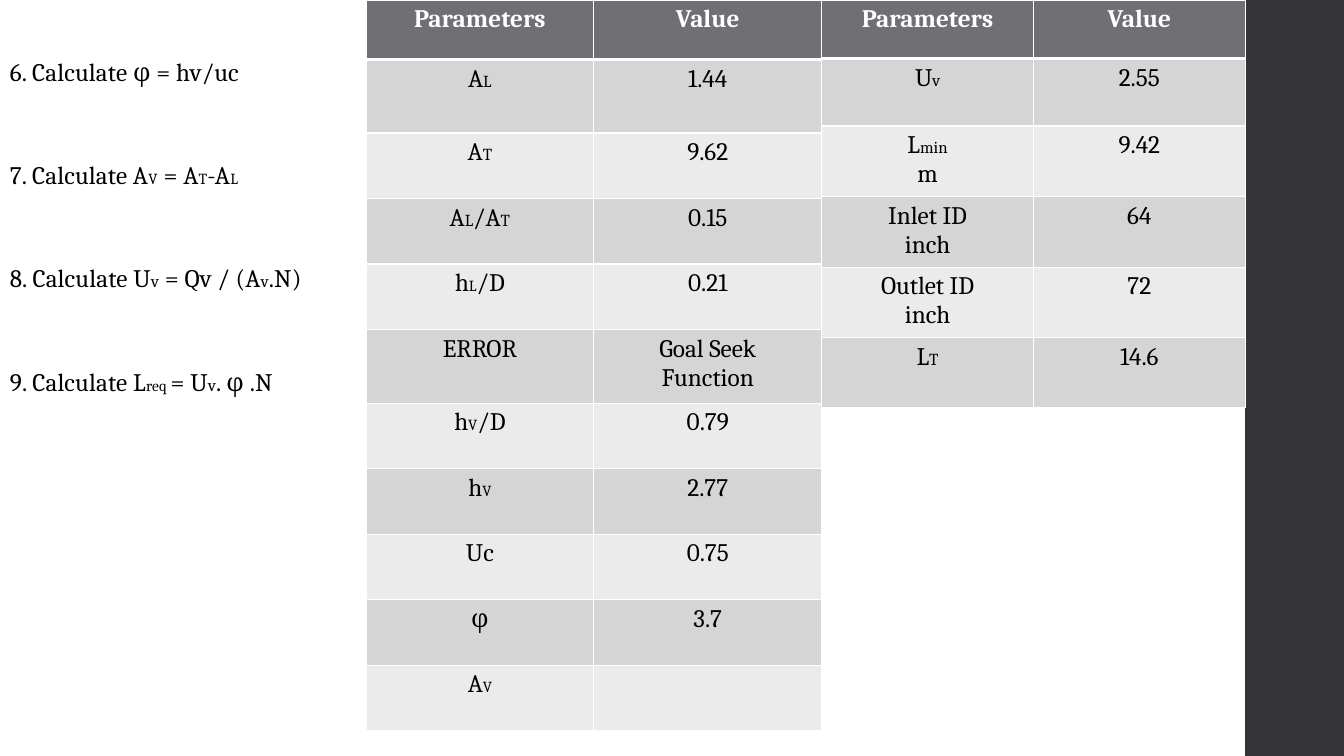
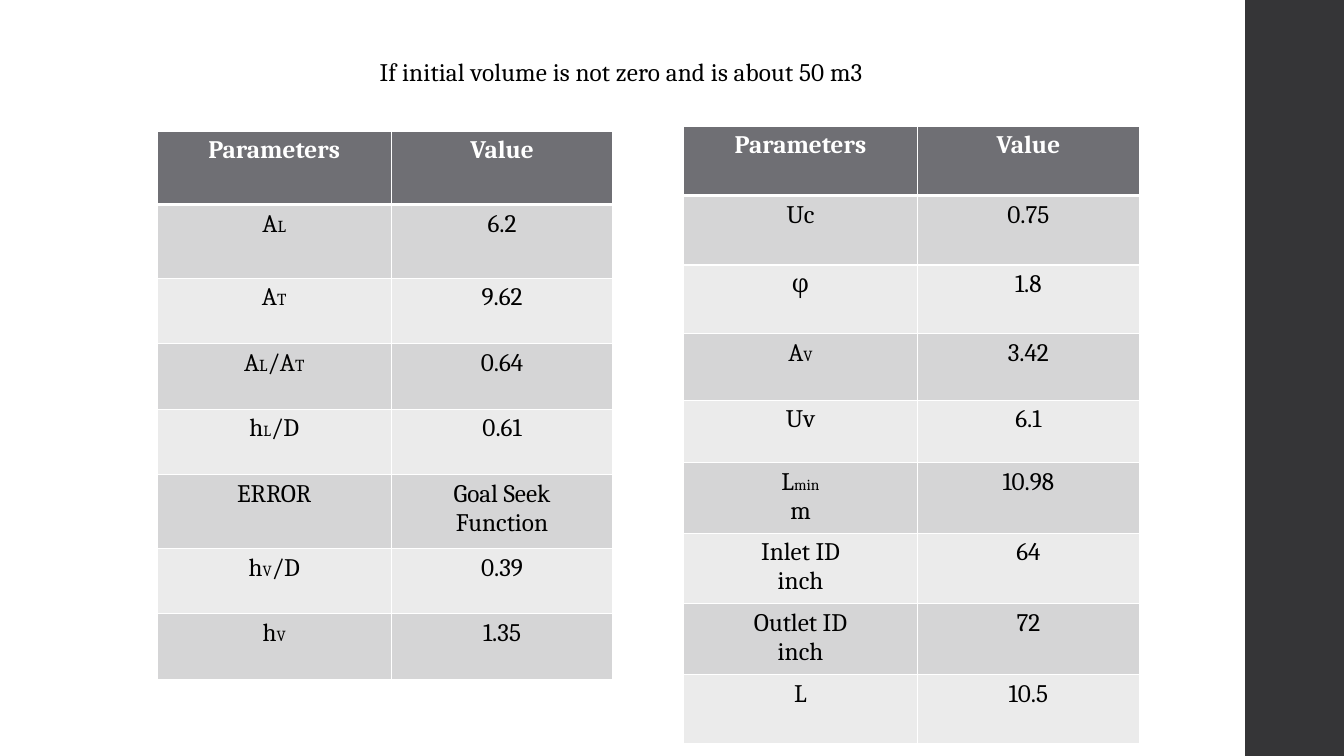
from dataclasses import dataclass

from lxml import etree
from pptx import Presentation
from pptx.dml.color import RGBColor
from pptx.enum.shapes import MSO_SHAPE
from pptx.enum.text import PP_ALIGN
from pptx.oxml.ns import qn
from pptx.util import Inches, Pt

RECTANGLE = MSO_SHAPE.RECTANGLE
LEFT, CENTER = PP_ALIGN.LEFT, PP_ALIGN.CENTER
SLIDE_WIDTH, SLIDE_HEIGHT = 13.33, 7.5
BAND_LEFT = 12.35


@dataclass(frozen=True)
class Theme:
    font: str = "Cambria"
    text_size: int = 18
    text: str = "000000"
    side_band: str = "353537"
    header_fill: str = "6F6F74"
    header_text: str = "FFFFFF"
    row_fills: tuple = ("D5D5D6", "EBEBEB")
    border: str = "FFFFFF"
    border_width: float = 1
    header_rule_width: float = 3


THEME = Theme()

STEPS = "\n".join([
    "6. Calculate φ = hv/uc",
    "7. Calculate A{11:V} = A{11:T}-A{11:L}",
    "8. Calculate U{12:v} = Qv / (A{12:v}.N)",
    "9. Calculate L{11:req }= U{12:v}. φ .N",
])
HEADER = ("Parameters", "Value")
AREA_LABELS = ["A{12:L}", "A{12:T}", "A{12:L}/A{12:T}", "h{11:L}/D", "ERROR",
               "h{11:V}/D", "h{11:V}"]
NOZZLE_ROWS = [("Inlet ID\ninch", "64"), ("Outlet ID\ninch", "72")]
GOAL_SEEK = "Goal Seek\nFunction"
AREA_HEIGHTS = [0.73, 0.65, 0.65, 0.65, 0.73, 0.65, 0.65]


def split_runs(text):
    """Yield (text, size) pairs; "{12:L}" marks a small run of 12 points."""
    for piece in text.split("{"):
        marked, brace, plain = piece.rpartition("}")
        if brace:
            size, label = marked.split(":")
            yield label, int(size)
        if plain:
            yield plain, THEME.text_size


def write_text(text_frame, text, *, color=THEME.text, bold=False, align=LEFT,
               line_spacing=1.0, gap=0, tracking=None):
    """Write one paragraph a line, with gap points between paragraphs."""
    text_frame.word_wrap = True
    for index, line in enumerate(text.split("\n")):
        paragraph = text_frame.paragraphs[0] if index == 0 else text_frame.add_paragraph()
        paragraph.alignment = align
        paragraph.line_spacing = line_spacing
        paragraph.font.size = Pt(THEME.text_size)
        if index:
            paragraph.space_before = Pt(gap)
        for content, size in split_runs(line):
            run = paragraph.add_run()
            run.text = content
            run.font.name = THEME.font
            run.font.size = Pt(size)
            run.font.bold = bold
            run.font.color.rgb = RGBColor.from_string(color)
            if tracking is not None:
                run.font._element.set("spc", str(round(tracking * 100)))


def add_body(slide, left, top, width, height, text, **text_format):
    box = slide.shapes.add_textbox(Inches(left), Inches(top), Inches(width), Inches(height))
    write_text(box.text_frame, text, line_spacing=0.95, tracking=0.1, **text_format)


def set_borders(cell, top_width, bottom_width):
    properties = cell._tc.get_or_add_tcPr()
    widths = {"a:lnL": THEME.border_width, "a:lnR": THEME.border_width,
              "a:lnT": top_width, "a:lnB": bottom_width}
    for tag, width in widths.items():
        line = etree.SubElement(properties, qn(tag), w=str(Pt(width)))
        fill = etree.SubElement(line, qn("a:solidFill"))
        etree.SubElement(fill, qn("a:srgbClr"), val=THEME.border)


def add_parameter_table(slide, left, top, column_widths, row_heights, rows):
    """Add a table of parameters under the shared header row."""
    rows = [HEADER, *rows]
    frame = slide.shapes.add_table(
        len(rows), len(HEADER), Inches(left), Inches(top),
        Inches(sum(column_widths)), Inches(sum(row_heights)))
    table = frame.table
    for column, width in zip(table.columns, column_widths):
        column.width = Inches(width)
    for row_index, (values, height) in enumerate(zip(rows, row_heights)):
        table.rows[row_index].height = Inches(height)
        is_header = row_index == 0
        fill = THEME.header_fill if is_header else THEME.row_fills[(row_index - 1) % 2]
        color = THEME.header_text if is_header else THEME.text
        top_width = THEME.header_rule_width if row_index == 1 else THEME.border_width
        bottom_width = THEME.header_rule_width if is_header else THEME.border_width
        for column_index, value in enumerate(values):
            cell = table.cell(row_index, column_index)
            set_borders(cell, top_width, bottom_width)
            cell.fill.solid()
            cell.fill.fore_color.rgb = RGBColor.from_string(fill)
            write_text(cell.text_frame, value, color=color, bold=is_header, align=CENTER)


def add_banded_slide(presentation):
    """Add a blank slide with the dark band down its right side."""
    slide = presentation.slides.add_slide(presentation.slide_layouts[6])
    band = slide.shapes.add_shape(RECTANGLE, Inches(BAND_LEFT), 0,
                                  Inches(SLIDE_WIDTH - BAND_LEFT), Inches(SLIDE_HEIGHT))
    band.shadow.inherit = False
    band.fill.solid()
    band.fill.fore_color.rgb = RGBColor.from_string(THEME.side_band)
    band.line.fill.background()
    return slide


def add_calculation_slide(presentation):
    slide = add_banded_slide(presentation)
    add_body(slide, 0, 0.53, 3.63, 3.6, STEPS, gap=53.3)
    area_values = ["1.44", "9.62", "0.15", "0.21", GOAL_SEEK, "0.79", "2.77"]
    add_parameter_table(
        slide, 3.63, 0, [2.26] * 2, [0.59, *AREA_HEIGHTS, 0.65, 0.65, 0.65],
        [*zip(AREA_LABELS, area_values), ("Uc", "0.75"), ("φ", "3.7"), ("A{11:V}", "")])
    add_parameter_table(
        slide, 8.15, 0, [2.1] * 2, [0.58, 0.67] + [0.69] * 4,
        [("U{12:v}", "2.55"), ("L{12:min}\nm", "9.42"), *NOZZLE_ROWS, ("L{12:T}", "14.6")])


def add_initial_volume_slide(presentation):
    slide = add_banded_slide(presentation)
    add_body(slide, 0, 0.53, 12.33, 0.4,
             "If initial volume is not zero and is about 50 m3", align=CENTER)
    column_widths = [2.32, 2.2]
    area_values = ["6.2", "9.62", "0.64", "0.61", GOAL_SEEK, "0.39", "1.35"]
    add_parameter_table(slide, 1.56, 1.3, column_widths, [0.73, *AREA_HEIGHTS],
                        zip(AREA_LABELS, area_values))
    add_parameter_table(
        slide, 6.78, 1.25, column_widths, [0.69, 0.69, 0.68, 0.66, 0.62] + [0.69] * 4,
        [("Uc", "0.75"), ("φ", "1.8"), ("A{11:V}", "3.42"), ("Uv", "6.1"),
         ("L{11:min}\nm", "10.98"), *NOZZLE_ROWS, ("L", "10.5")])


def main():
    presentation = Presentation()
    presentation.slide_width = Inches(SLIDE_WIDTH)
    presentation.slide_height = Inches(SLIDE_HEIGHT)
    add_calculation_slide(presentation)
    add_initial_volume_slide(presentation)
    presentation.save("out.pptx")


if __name__ == "__main__":
    main()
